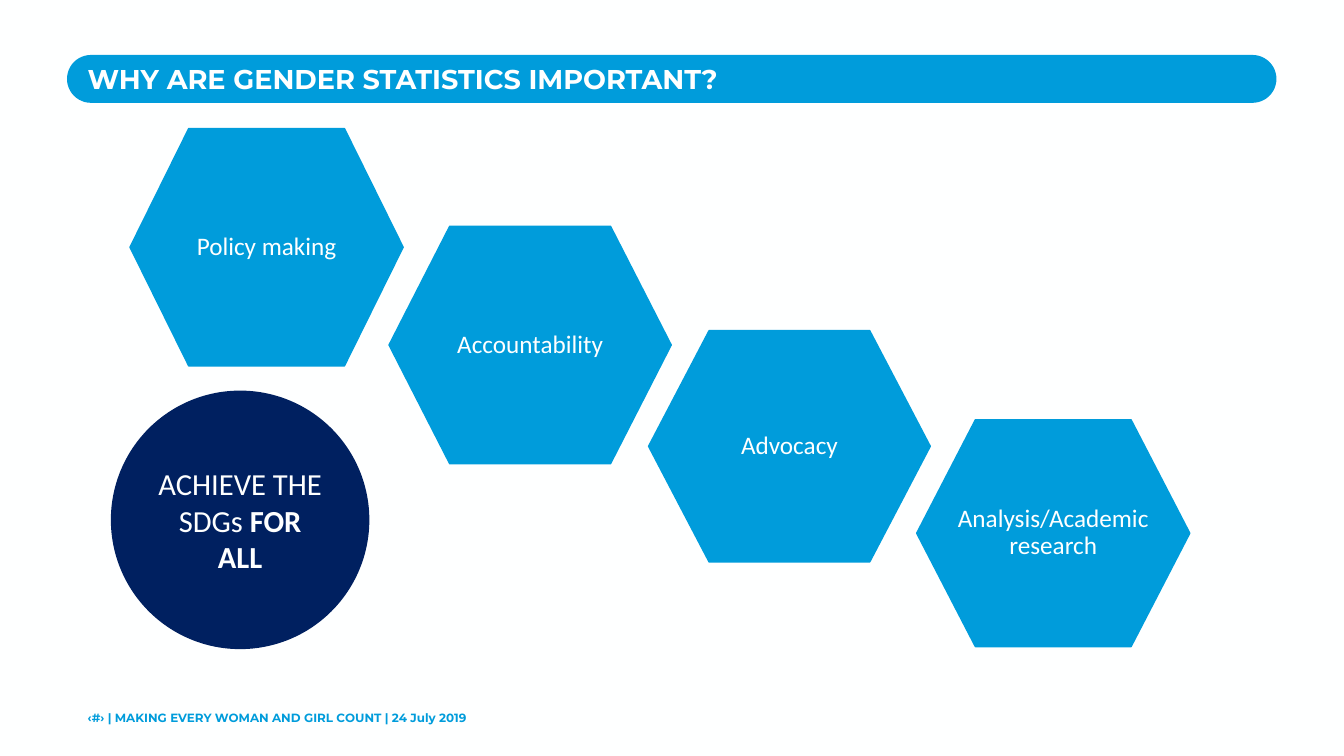
"""Build the slide on why gender statistics are important."""
import pptx
import pptx.dml.color
import pptx.enum.shapes
import pptx.enum.text
import pptx.util

Inches = pptx.util.Inches
SHAPE = pptx.enum.shapes.MSO_SHAPE
ANCHOR = pptx.enum.text.MSO_ANCHOR
ALIGN = pptx.enum.text.PP_ALIGN

TITLE = "WHY ARE GENDER STATISTICS IMPORTANT?"
FOOTER = "‹#› | MAKING EVERY WOMAN AND GIRL COUNT | 24 July 2019"
USES = [
    ("Policy making", (2.58, 2.55, 5.42, 4.71)),
    ("Accountability", (7.72, 4.49, 5.6, 4.71)),
    ("Advocacy", (12.87, 6.56, 5.59, 4.59)),
    ("Analysis/Academic research", (18.19, 8.33, 5.42, 4.5)),
]
GOAL = [("ACHIEVE THE SDGs ", False), ("FOR ALL", True)]

THEME = {
    "blue": "009CDB", "navy": "002060", "white": "FEFFFF",
    "title": {"name": "Montserrat", "size": 38.8, "bold": True},
    "footer": {"name": "Montserrat", "size": 17, "bold": True},
    "use": {"name": "Calibri", "size": 36, "bold": False},
    "goal": {"name": "Calibri", "size": 43.7, "bold": False},
    "corner": 0.215,
}


def color(name):
    return pptx.dml.color.RGBColor.from_string(THEME[name])


def paint(sp, fill, line=None):
    sp.shadow.inherit = False
    sp.fill.solid()
    sp.fill.fore_color.rgb = color(fill)
    if line:
        sp.line.color.rgb = color(fill)
        sp.line.width = pptx.util.Pt(line)
    else:
        sp.line.fill.background()


def write(sp, runs, style, ink="white", align=ALIGN.LEFT, anchor=ANCHOR.TOP,
          inset=(0, 0), spacing=1.0):
    tf = sp.text_frame
    x, y = map(Inches, inset)
    frame = {"word_wrap": True, "auto_size": pptx.enum.text.MSO_AUTO_SIZE.NONE,
             "vertical_anchor": anchor, "margin_left": x, "margin_right": x,
             "margin_top": y, "margin_bottom": y}
    for key, value in frame.items():
        setattr(tf, key, value)
    p = tf.paragraphs[0]
    p.alignment, p.line_spacing = align, spacing
    for text, bold in runs:
        r = p.add_run()
        r.text = text
        fmt = THEME[style] | {"size": pptx.util.Pt(THEME[style]["size"])}
        fmt["bold"] = bold or fmt["bold"]
        for key, value in fmt.items():
            setattr(r.font, key, value)
        r.font.color.rgb = color(ink)


def add_hexagon(shapes, left, top, width, height):
    right, bottom, middle = left + width, top + height, top + height / 2
    cut = THEME["corner"] * width
    points = [(left, middle), (left + cut, top), (right - cut, top),
              (right, middle), (right - cut, bottom), (left + cut, bottom)]
    points = [(Inches(x), Inches(y)) for x, y in points]
    builder = shapes.build_freeform(*points[0])
    builder.add_line_segments(points[1:], close=True)
    return builder.convert_to_shape()


def main():
    prs = pptx.Presentation()
    prs.slide_width, prs.slide_height = Inches(26.67), Inches(15)
    slide = prs.slides.add_slide(prs.slide_layouts[5])
    slide.background.fill.solid()
    slide.background.fill.fore_color.rgb = color("white")
    shapes = slide.shapes

    bar = shapes.add_shape(SHAPE.ROUNDED_RECTANGLE,
                           *map(Inches, (1.33, 1.09, 24, 0.95)))
    bar.adjustments[0] = 0.5
    paint(bar, "blue")

    title = shapes.title
    box = {"left": 1.74, "top": 1.23, "width": 23.22, "height": 0.65}
    for key, value in box.items():
        setattr(title, key, Inches(value))
    write(title, [(TITLE, True)], "title")
    bar._element.addnext(title._element)

    footer = shapes.add_textbox(*map(Inches, (1.74, 14.09, 14.22, 0.29)))
    write(footer, [(FOOTER, True)], "footer", ink="blue")

    centred = {"align": ALIGN.CENTER, "anchor": ANCHOR.MIDDLE}
    for text, place in USES:
        sp = add_hexagon(shapes, *place)
        paint(sp, "blue", line=2)
        write(sp, [(text, False)], "use", inset=(0.65, 0.61), spacing=0.9, **centred)

    goal = shapes.add_shape(SHAPE.OVAL, *map(Inches, (2.2, 7.75, 5.13, 5.13)))
    paint(goal, "navy")
    write(goal, GOAL, "goal", inset=(0.1, 0.05), **centred)

    prs.save("out.pptx")


if __name__ == "__main__":
    main()
